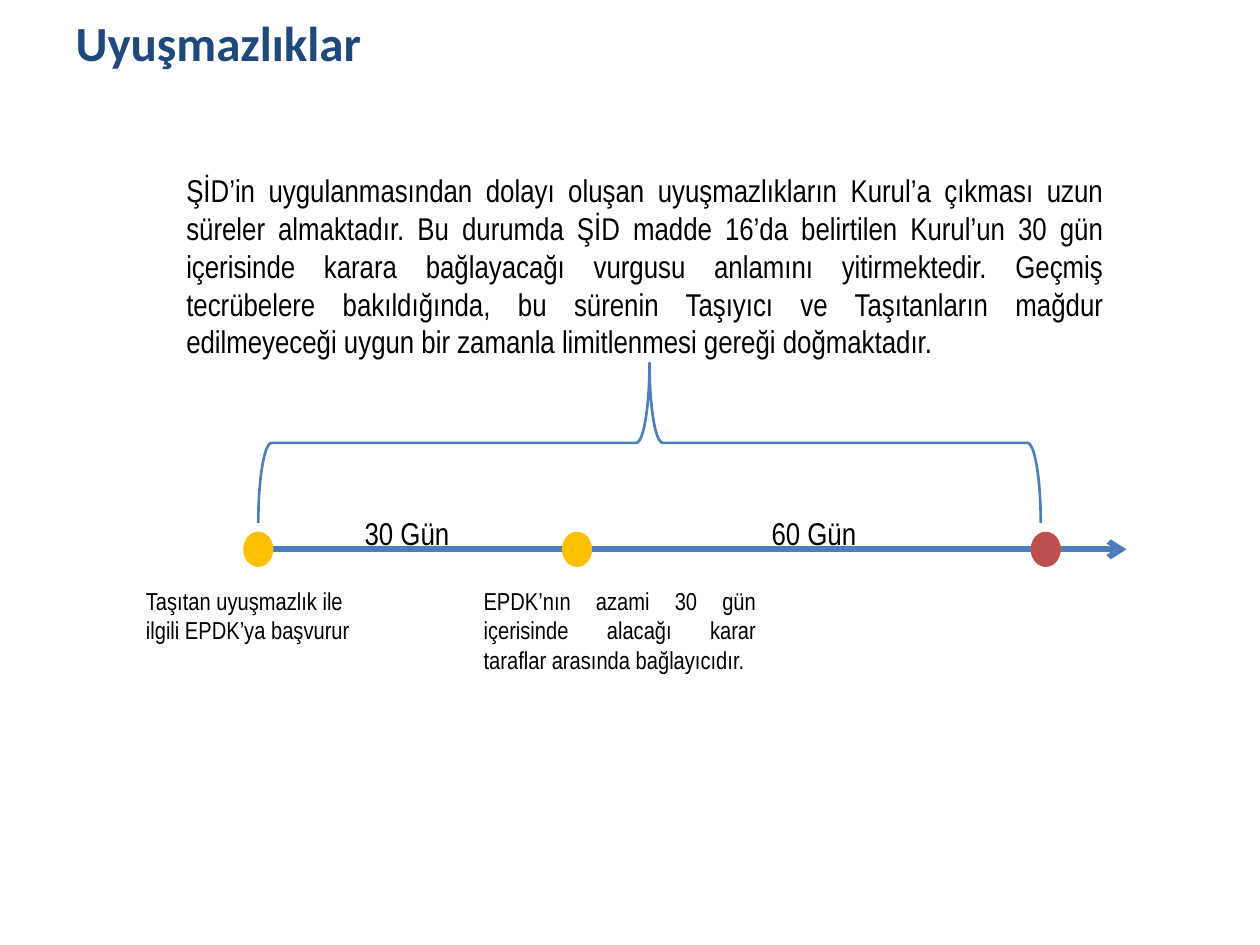
"""Build the dispute timeline slide on a grid of 100 columns by 75 rows."""
from typing import NamedTuple

from lxml import etree
from pptx import Presentation
from pptx.dml.color import RGBColor
from pptx.enum.shapes import MSO_CONNECTOR, MSO_SHAPE
from pptx.enum.text import MSO_ANCHOR, MSO_AUTO_SIZE, PP_ALIGN
from pptx.oxml.ns import qn
from pptx.util import Inches, Pt

LEFT, CENTER, JUSTIFY = PP_ALIGN.LEFT, PP_ALIGN.CENTER, PP_ALIGN.JUSTIFY
TOP = MSO_ANCHOR.TOP
FIXED, GROW = MSO_AUTO_SIZE.NONE, MSO_AUTO_SIZE.SHAPE_TO_FIT_TEXT
BRACE, DOT, STRAIGHT = MSO_SHAPE.RIGHT_BRACE, MSO_SHAPE.OVAL, MSO_CONNECTOR.STRAIGHT
COLORS = {"title": "1F497D", "line": "4B7EBC", "text": "000000",
          "step": "FFC000", "end": "C0504D"}
COLS, ROWS = 100, 75
AXIS, DOT_W, DOT_H = 43.6, 2.4, 2.8


class Label(NamedTuple):
    text: str
    col: float
    row: float
    cols: float
    rows: float
    size: int
    align: PP_ALIGN


class Milestone(NamedTuple):
    col: float
    color: str


BODY = Label(
    "ŞİD’in uygulanmasından dolayı oluşan uyuşmazlıkların Kurul’a çıkması uzun süreler "
    "almaktadır. Bu durumda ŞİD madde 16’da belirtilen Kurul’un 30 gün içerisinde karara "
    "bağlayacağı vurgusu anlamını yitirmektedir. Geçmiş tecrübelere bakıldığında, bu sürenin "
    "Taşıyıcı ve Taşıtanların mağdur edilmeyeceği uygun bir zamanla limitlenmesi gereği "
    "doğmaktadır.", 13.8, 13.1, 74.8, 16.2, 18, JUSTIFY)
LABELS = [
    Label("30 Gün", 24.8, 40.3, 15, 4, 18, CENTER),
    Label("60 Gün", 57.1, 40.3, 15, 4, 18, CENTER),
    Label("Taşıtan uyuşmazlık ile ilgili EPDK’ya başvurur", 10.6, 46, 19.7, 5.7, 14, LEFT),
    Label("EPDK’nın azami 30 gün içerisinde alacağı karar taraflar arasında bağlayıcıdır.",
          37.4, 46, 23.6, 8.1, 14, JUSTIFY),
]
MILESTONES = [Milestone(20.5, "step"), Milestone(45.8, "step"), Milestone(83, "end")]

prs = Presentation()
prs.slide_width, prs.slide_height = Inches(10), Inches(7.5)


def grid(col: float, row: float, *size: float) -> list[int]:
    """Turn a grid position, and a size if given, into lengths."""
    units = (prs.slide_width / COLS, prs.slide_height / ROWS)
    return [round(v * units[i % 2]) for i, v in enumerate((col, row, *size))]


def rgb(name: str) -> RGBColor:
    """Look up a colour by its role."""
    return RGBColor.from_string(COLORS[name])


def write(tf, text: str, *, size: int, font: str = "Arial Narrow", color: str = "text",
          bold: bool = False, align: PP_ALIGN = LEFT, fit: MSO_AUTO_SIZE = GROW) -> None:
    """Fill a text frame with one formatted paragraph."""
    tf.word_wrap, tf.auto_size, tf.vertical_anchor = True, fit, TOP
    p = tf.paragraphs[0]
    p.alignment = align
    r = p.add_run()
    r.text = text
    r.font.name, r.font.size, r.font.bold = font, Pt(size), bold
    r.font.color.rgb = rgb(color)


def add_label(shapes, label: Label) -> None:
    """Draw a text box."""
    box = shapes.add_textbox(*grid(label.col, label.row, label.cols, label.rows))
    write(box.text_frame, label.text, size=label.size, align=label.align)


def add_brace(shapes) -> None:
    """Draw the brace that joins the timeline to the body text."""
    sp = shapes.add_shape(BRACE, *grid(45.2, 4.1, 12.7, 62.1))
    sp.rotation = 270
    sp.shadow.inherit = False
    sp.fill.background()
    sp.line.color.rgb, sp.line.width = rgb("line"), Pt(1.5)


def add_axis(shapes) -> None:
    """Draw the timeline arrow."""
    cn = shapes.add_connector(STRAIGHT, *grid(20.1, AXIS, 89.4, AXIS))
    cn.line.color.rgb, cn.line.width = rgb("line"), Pt(3.25)
    etree.SubElement(cn.line._get_or_add_ln(), qn("a:tailEnd"), type="arrow")
    etree.SubElement(cn._element.spPr, qn("a:effectLst"))


def add_milestone(shapes, mark: Milestone) -> None:
    """Draw a dot centred on the timeline."""
    sp = shapes.add_shape(DOT, *grid(mark.col - DOT_W / 2, AXIS - DOT_H / 2, DOT_W, DOT_H))
    sp.shadow.inherit = False
    sp.fill.solid()
    sp.fill.fore_color.rgb = rgb(mark.color)
    sp.line.fill.background()


def main() -> None:
    """Build and save the slide."""
    s = prs.slides.add_slide(prs.slide_layouts[5])
    title = s.shapes.title
    title.left, title.top, title.width, title.height = grid(5, 0.5, 90, 12.5)
    write(title.text_frame, "Uyuşmazlıklar", size=28, font="Calibri", color="title",
          bold=True, fit=FIXED)
    timeline = s.shapes.add_group_shape().shapes
    add_brace(timeline)
    add_axis(timeline)
    for mark in MILESTONES:
        add_milestone(timeline, mark)
    for label in LABELS:
        add_label(timeline, label)
    add_label(s.shapes, BODY)
    prs.save("out.pptx")


if __name__ == "__main__":
    main()
